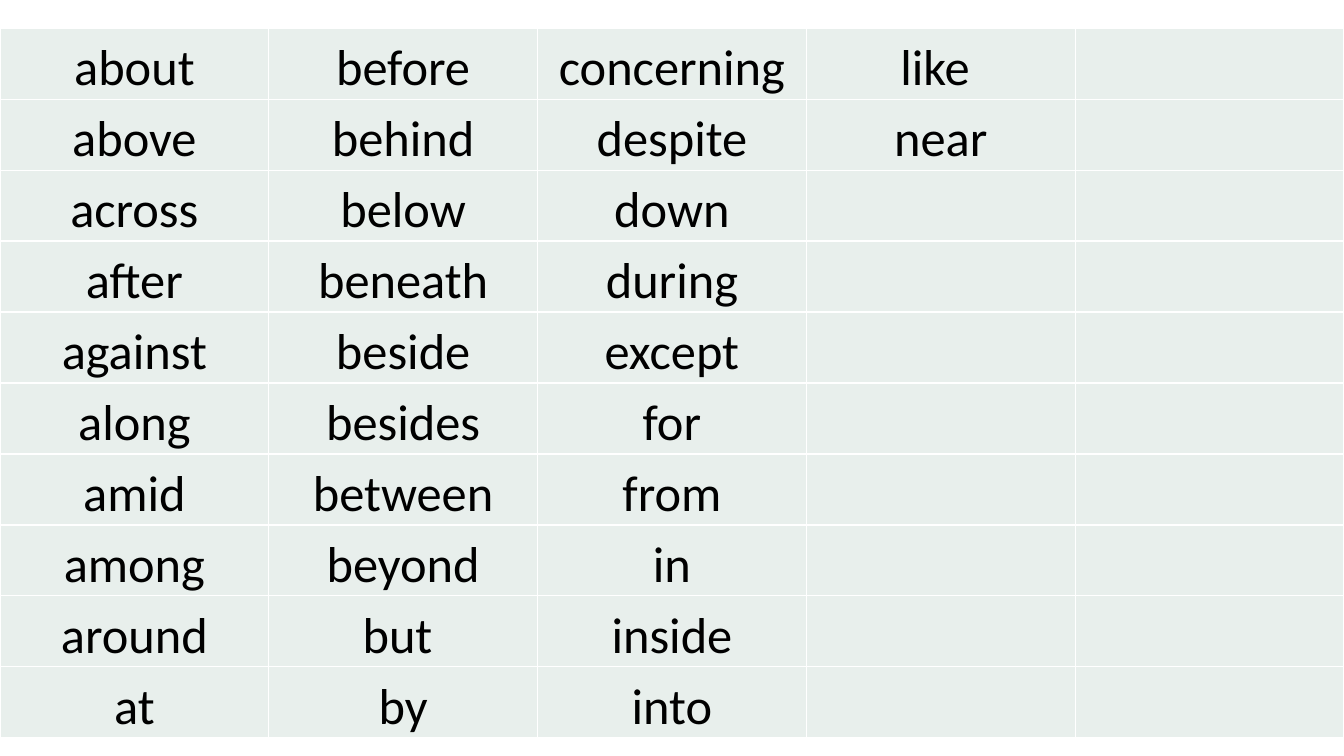
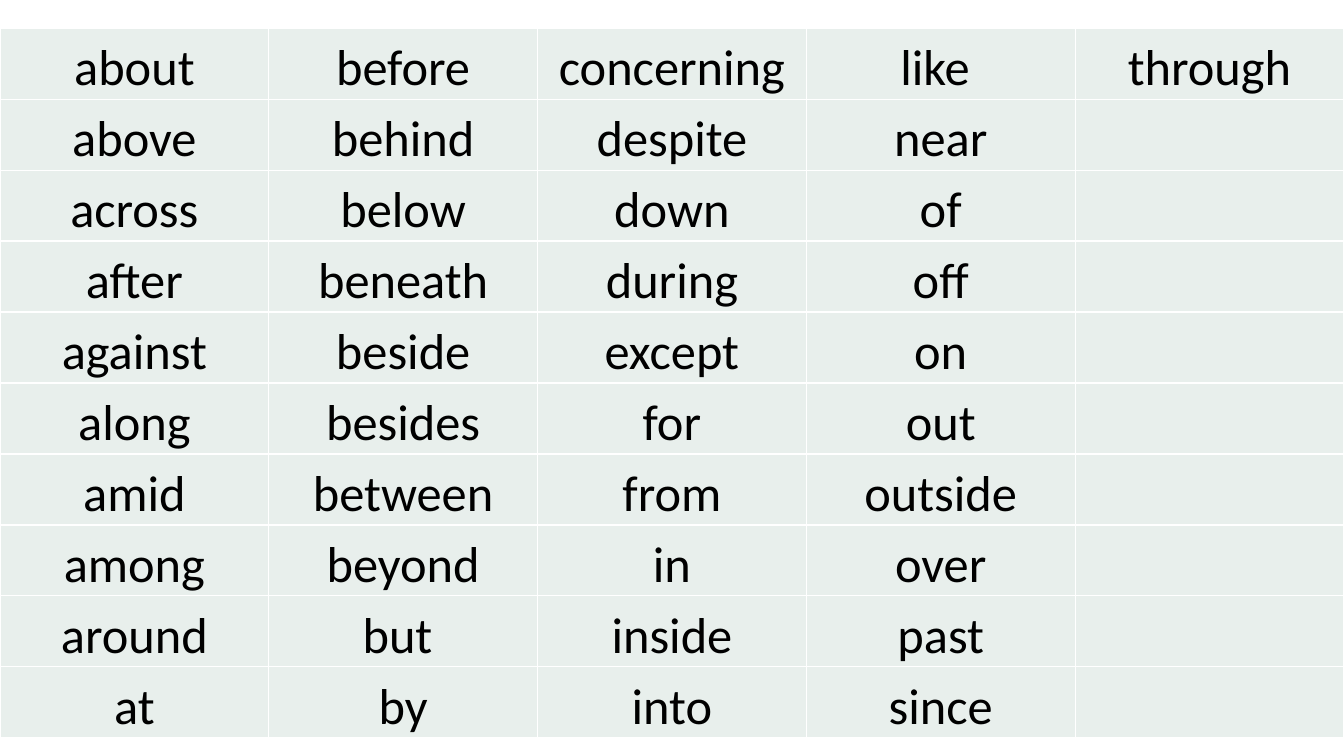
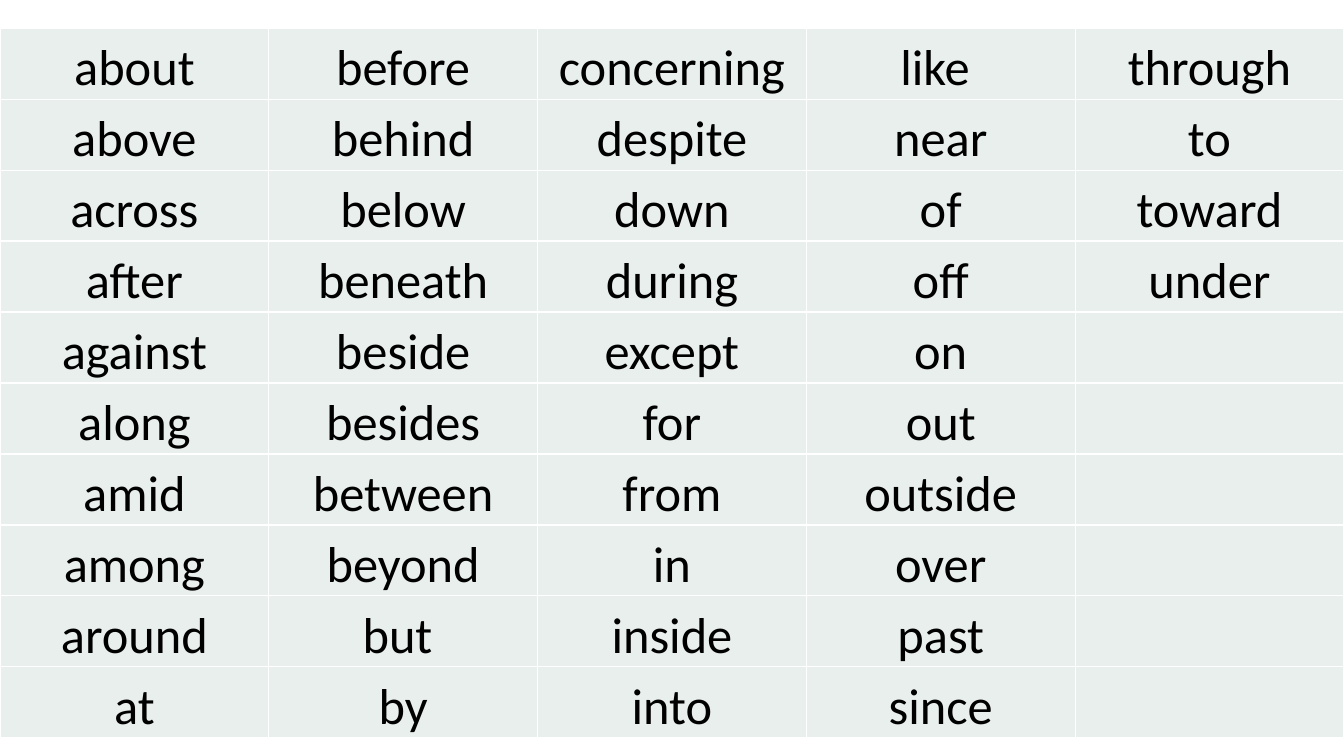
from lxml.etree import SubElement
from pptx import Presentation
from pptx.dml.color import RGBColor
from pptx.enum.text import PP_ALIGN
from pptx.oxml.ns import qn
from pptx.util import Inches, Pt

COLS = [
    ["about", "above", "across", "after", "against",
     "along", "amid", "among", "around", "at"],
    ["before", "behind", "below", "beneath", "beside",
     "besides", "between", "beyond", "but ", "by"],
    ["concerning", "despite", "down", "during", "except",
     "for", "from", "in", "inside", "into"],
    ["like ", "near", "of", "off", "on",
     "out", "outside", "over", "past", "since"],
    ["through", "to", "toward", "under"],
]
SHOWN = [32, 41, 44]  # words revealed on each slide

WIDE, HIGH = 13.33, 7.5
TOP, DEEP = 0.28, 6.98
ROWS = 10
PAD = 0.07
FONT, SIZE, LEAD = "Calibri", 36, 1.15
INK, FILL, EDGE = "000000", "E8EFEC", "FFFFFF"


def color(code):
    return RGBColor.from_string(code)


def rule(cell):
    """Draw a thin line on all four sides of a cell."""
    props = cell._tc.get_or_add_tcPr()
    for side in ("lnL", "lnR", "lnT", "lnB"):
        line = SubElement(props, qn(f"a:{side}"), w=str(Pt(1)))
        fill = SubElement(line, qn("a:solidFill"))
        SubElement(fill, qn("a:srgbClr"), val=EDGE)


def style(cell):
    """Set the borders, fill and margins of a cell."""
    rule(cell)
    cell.fill.solid()
    cell.fill.fore_color.rgb = color(FILL)
    cell.margin_left = cell.margin_right = Inches(PAD)
    cell.margin_top = cell.margin_bottom = 0


def write(cell, word):
    para = cell.text_frame.paragraphs[0]
    para.alignment = PP_ALIGN.CENTER
    para.line_spacing = LEAD
    run = para.add_run()
    run.text = word
    run.font.name = FONT
    run.font.size = Pt(SIZE)
    run.font.color.rgb = color(INK)


def add_words(slide, count):
    """Add the word table with its first words, column by column."""
    table = slide.shapes.add_table(
        ROWS, len(COLS), 0, Inches(TOP), Inches(WIDE), Inches(DEEP)).table
    table.first_row = table.horz_banding = False
    for cell in table.iter_cells():
        style(cell)
    for col, words in enumerate(COLS):
        for row, word in enumerate(words):
            if col * ROWS + row < count:
                write(table.cell(row, col), word)


def main():
    deck = Presentation()
    deck.slide_width, deck.slide_height = Inches(WIDE), Inches(HIGH)
    blank = deck.slide_layouts[6]
    for count in SHOWN:
        add_words(deck.slides.add_slide(blank), count)
    deck.save("out.pptx")


if __name__ == "__main__":
    main()
